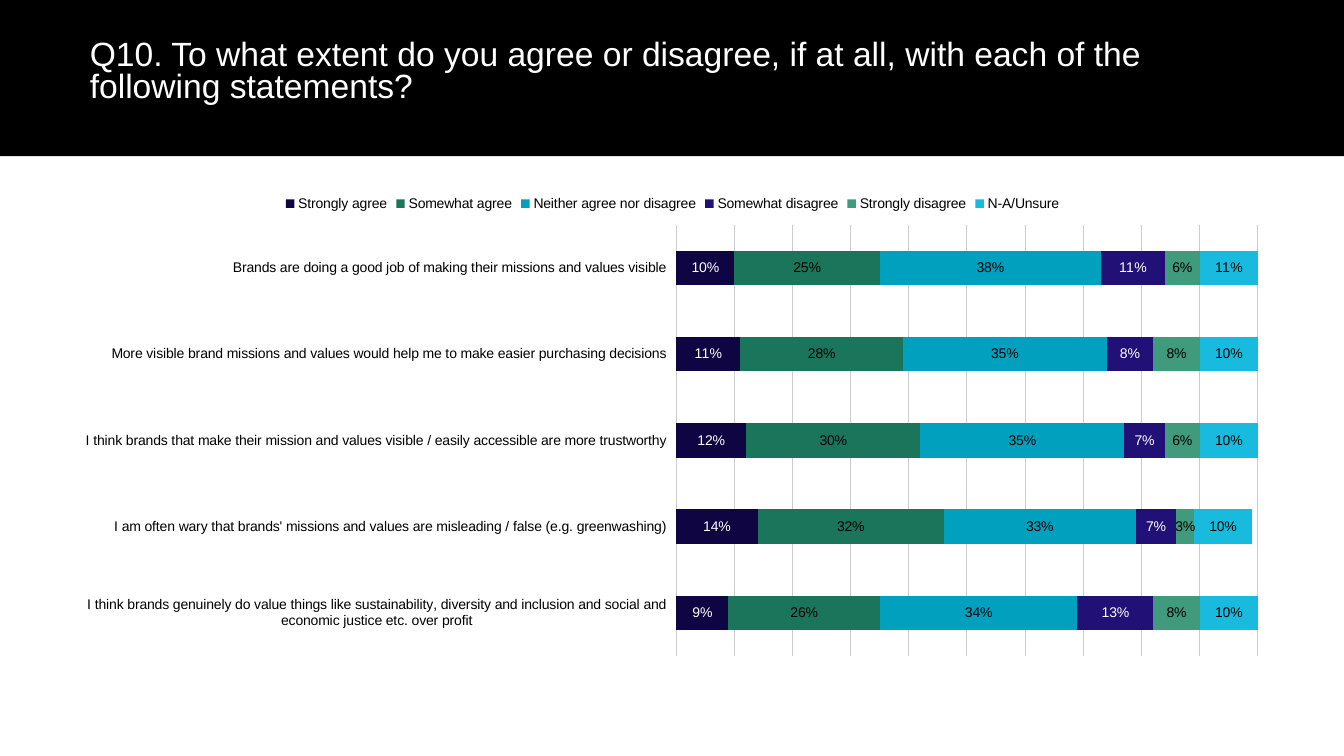
from lxml import etree
from pptx import Presentation
from pptx import util as u
from pptx.chart.data import CategoryChartData
from pptx.dml.color import RGBColor
from pptx.enum import chart as kinds, shapes, text
from pptx.oxml.ns import qn

COLOURS = {
    "black": "000000",
    "white": "FFFFFF",
    "grid": "CCCCCC",
    "navy": "0F0542",
    "green": "1B755A",
    "teal": "00A0BE",
    "indigo": "211176",
    "sage": "409A7C",
    "sky": "18BBDD",
}
STATEMENTS = [
    "Brands are doing a good job of making their missions and values visible",
    "More visible brand missions and values would help me to make easier purchasing decisions",
    "I think brands that make their mission and values visible / easily accessible are more trustworthy",
    "I am often wary that brands' missions and values are misleading / false (e.g. greenwashing)",
    "I think brands genuinely do value things like sustainability, diversity and inclusion "
    "and social and economic justice etc. over profit",
]
ANSWERS = [
    ("Strongly agree", "navy", "white", [0.10, 0.11, 0.12, 0.14, 0.09]),
    ("Somewhat agree", "green", "black", [0.25, 0.28, 0.30, 0.32, 0.26]),
    ("Neither agree nor disagree", "teal", "black", [0.38, 0.35, 0.35, 0.33, 0.34]),
    ("Somewhat disagree", "indigo", "white", [0.11, 0.08, 0.07, 0.07, 0.13]),
    ("Strongly disagree", "sage", "black", [0.06, 0.08, 0.06, 0.03, 0.08]),
    ("N-A/Unsure", "sky", "black", [0.11, 0.10, 0.10, 0.10, 0.10]),
]
WIDTH, HEIGHT = u.Inches(13.33), u.Inches(7.5)
COLUMN, ROW = WIDTH / 100, HEIGHT / 100


def colour(name):
    return RGBColor.from_string(COLOURS[name])


def style_font(font, size, name):
    for key, value in {"name": "Arial", "size": u.Pt(size), "bold": False}.items():
        setattr(font, key, value)
    font.color.rgb = colour(name)


deck = Presentation()
deck.slide_width, deck.slide_height = WIDTH, HEIGHT
page = deck.slides.add_slide(deck.slide_layouts[5])

title = page.shapes.title
band = page.shapes.add_shape(
    shapes.MSO_SHAPE.RECTANGLE, 0, 0, WIDTH, int(20.67 * ROW)
)
band.shadow.inherit = False
band.fill.solid()
band.fill.fore_color.rgb = colour("black")
band.line.fill.background()
title.element.addprevious(band.element)

title_place = {
    "left": 5.93 * COLUMN,
    "top": 4.67 * ROW,
    "width": 86.12 * COLUMN,
    "height": 10.67 * ROW,
}
for key, value in title_place.items():
    setattr(title, key, int(value))
frame_format = {
    "word_wrap": True,
    "auto_size": text.MSO_AUTO_SIZE.NONE,
    "vertical_anchor": text.MSO_ANCHOR.TOP,
}
for key, value in frame_format.items():
    setattr(title.text_frame, key, value)
para = title.text_frame.paragraphs[0]
para_format = {
    "alignment": text.PP_ALIGN.LEFT,
    "line_spacing": 0.8,
    "space_before": u.Pt(0),
}
for key, value in para_format.items():
    setattr(para, key, value)
span = para.add_run()
span.text = (
    "Q10. To what extent do you agree or disagree, if at all, "
    "with each of the following statements?"
)
style_font(span.font, 24, "white")

data = CategoryChartData(number_format="0%")
data.categories = STATEMENTS
for answer, fill, ink, shares in ANSWERS:
    data.add_series(answer, shares)
chart = page.shapes.add_chart(
    kinds.XL_CHART_TYPE.BAR_STACKED,
    int(4.58 * COLUMN),
    int(24.4 * ROW),
    int(90.92 * COLUMN),
    int(63.73 * ROW),
    data,
).chart
chart.has_title = False
style_font(chart.font, 10, "black")

chart.has_legend = True
chart.legend.position = kinds.XL_LEGEND_POSITION.TOP
chart.legend.include_in_layout = False
style_font(chart.legend.font, 10, "black")

statement_axis = chart.category_axis
statement_format = {
    "reverse_order": True,
    "major_tick_mark": kinds.XL_TICK_MARK.NONE,
    "minor_tick_mark": kinds.XL_TICK_MARK.NONE,
    "tick_label_position": kinds.XL_TICK_LABEL_POSITION.LOW,
    "has_major_gridlines": False,
}
for key, value in statement_format.items():
    setattr(statement_axis, key, value)
statement_axis.format.line.fill.background()
style_font(statement_axis.tick_labels.font, 10, "black")

share_axis = chart.value_axis
share_format = {
    "minimum_scale": 0,
    "maximum_scale": 1,
    "major_unit": 0.1,
    "has_major_gridlines": True,
    "visible": False,
}
for key, value in share_format.items():
    setattr(share_axis, key, value)
grid_line = share_axis.major_gridlines.format.line
grid_line.color.rgb = colour("grid")
grid_line.width = u.Pt(0.75)

plot = chart.plots[0]
plot.vary_by_categories = False
plot.gap_width, plot.overlap = 150, 100
for series, (answer, fill, ink, shares) in zip(plot.series, ANSWERS):
    series.format.fill.solid()
    series.format.fill.fore_color.rgb = colour(fill)
    labels = series.data_labels
    label_format = {
        "show_value": True,
        "number_format": "0%",
        "number_format_is_linked": False,
        "position": kinds.XL_LABEL_POSITION.CENTER,
    }
    for key, value in label_format.items():
        setattr(labels, key, value)
    style_font(labels.font, 10, ink)

plot_area = chart.element.find(".//" + qn("c:plotArea"))
layout = plot_area.find(qn("c:layout"))
if layout is None:
    layout = etree.Element(qn("c:layout"))
    plot_area.insert(0, layout)
manual = etree.SubElement(layout, qn("c:manualLayout"))
plot_place = {
    "layoutTarget": "inner",
    "xMode": "edge",
    "yMode": "edge",
    "x": "0.503",
    "y": "0.084",
    "w": "0.476",
    "h": "0.895",
}
for key, value in plot_place.items():
    etree.SubElement(manual, qn("c:" + key)).set("val", value)

deck.save("out.pptx")
